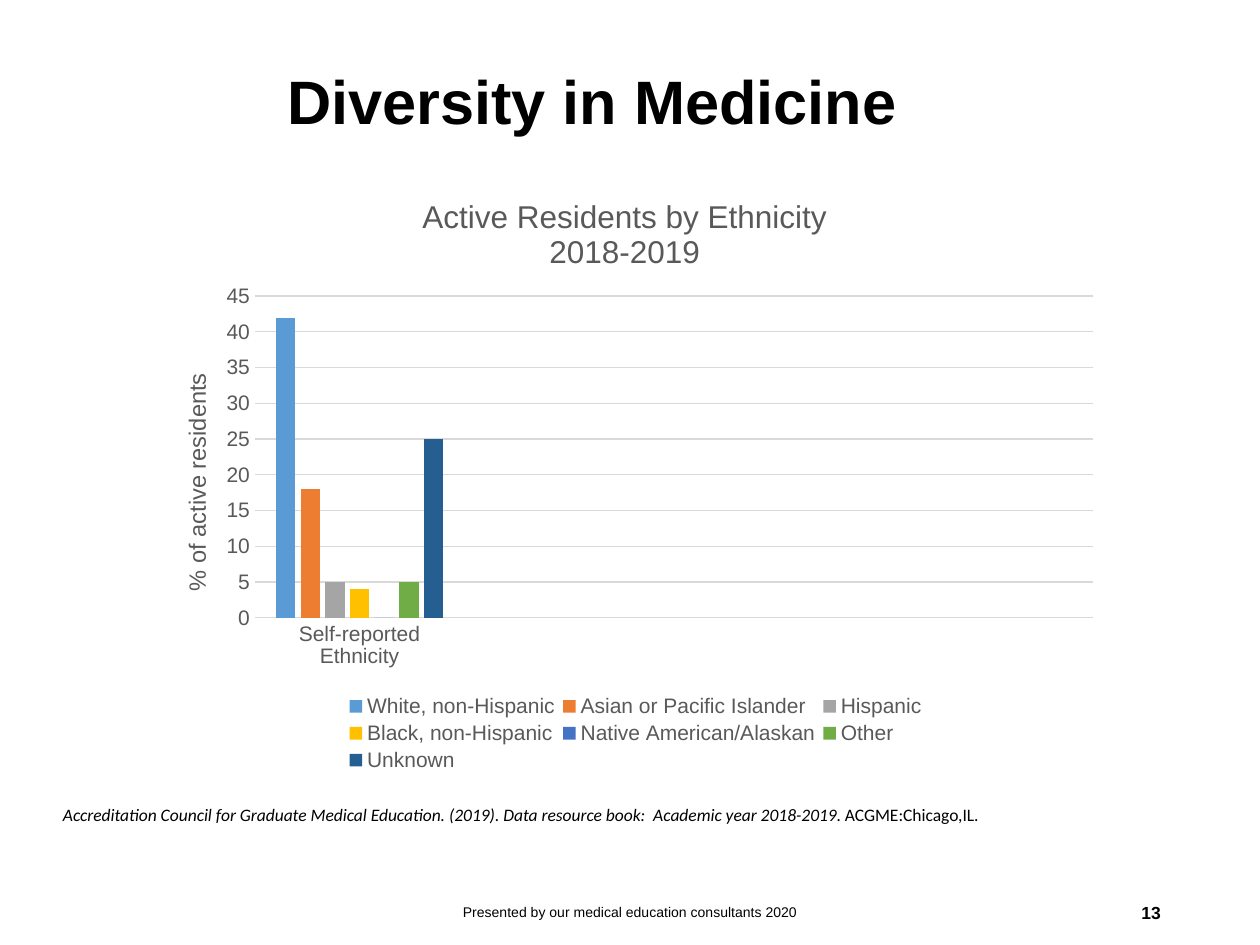
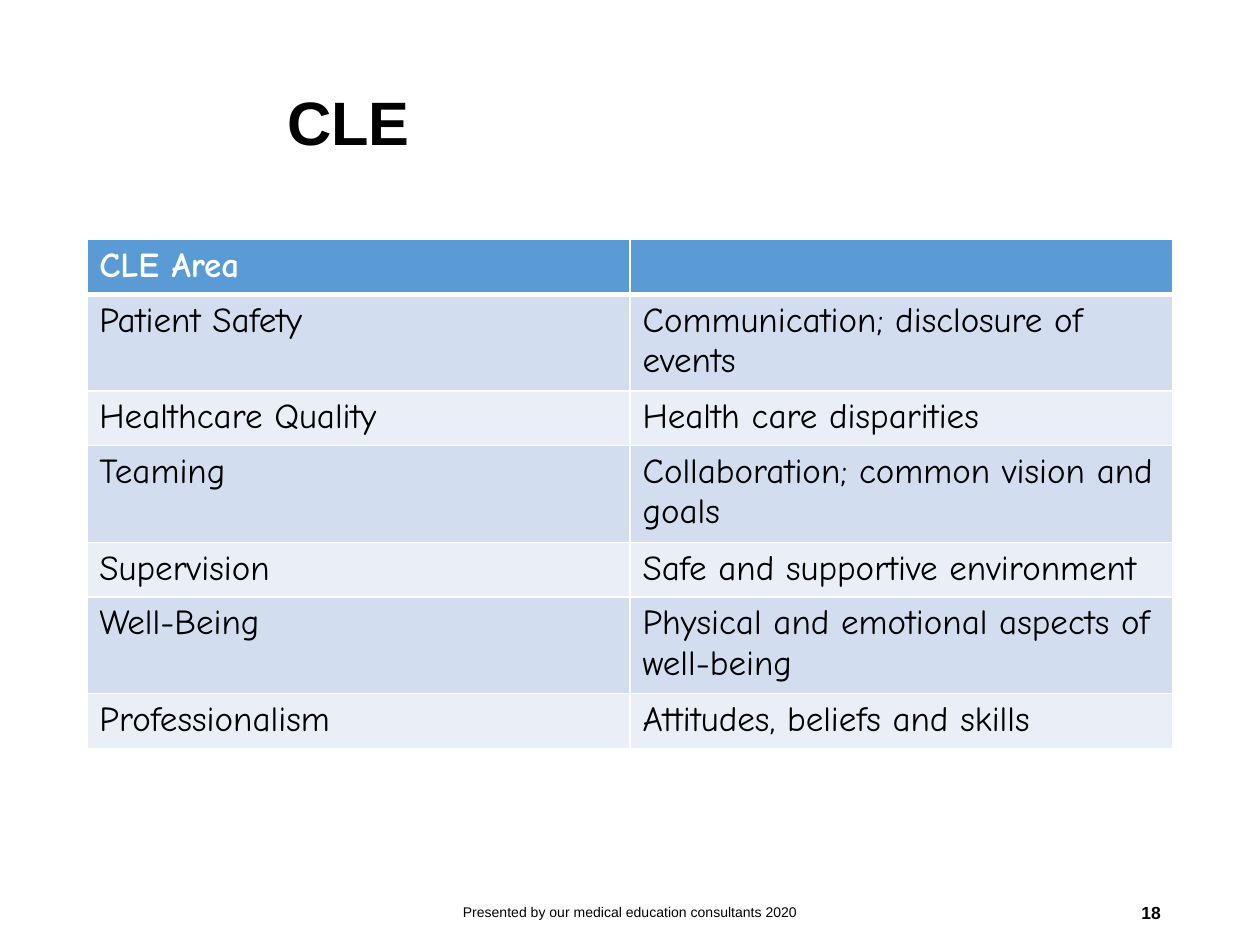
from lxml.etree import SubElement
from pptx import Presentation
from pptx.chart.data import CategoryChartData
from pptx.dml.color import RGBColor
from pptx.enum.chart import XL_CHART_TYPE, XL_LEGEND_POSITION, XL_TICK_MARK
from pptx.enum.text import MSO_ANCHOR, PP_ALIGN
from pptx.oxml import parse_xml
from pptx.oxml.ns import nsdecls, qn
from pptx.util import Cm, Pt

COLOURS = {
    "black": "000000", "white": "FFFFFF", "grey": "595959", "rule": "D9D9D9",
    "header": "5B9BD5", "dark band": "D2DEEF", "light band": "EAEFF7",
}
FOOTER = "Presented by our medical education consultants 2020"
ETHNICITIES = [
    ("White, non-Hispanic", 42, "5B9BD5"),
    ("Asian or Pacific Islander", 18, "ED7D31"),
    ("Hispanic", 5, "A5A5A5"),
    ("Black, non-Hispanic", 4, "FFC000"),
    ("Native American/Alaskan", 0, "4472C4"),
    ("Other", 5, "70AD47"),
    ("Unknown", 25, "255E91"),
]
CLE_AREAS = [
    ("CLE Area", ""),
    ("Patient Safety", "Communication; disclosure of events"),
    ("Healthcare Quality", "Health care disparities"),
    ("Teaming", "Collaboration; common vision and goals"),
    ("Supervision", "Safe and supportive environment"),
    ("Well-Being", "Physical and emotional aspects of well-being"),
    ("Professionalism", "Attitudes, beliefs and skills"),
]


def style_font(font, size, colour="black", name="Arial", bold=False, italic=False):
    font.size, font.name, font.bold, font.italic = Pt(size), name, bold, italic
    font.color.rgb = RGBColor.from_string(COLOURS[colour])


def write_text(para, text, **style):
    span = para.add_run()
    span.text = text
    style_font(span.font, **style)


def set_layout(element, index, **fractions):
    for old in element.findall(qn("c:layout")):
        element.remove(old)
    layout = parse_xml(f"<c:layout {nsdecls('c')}><c:manualLayout/></c:layout>")
    manual = layout[0]
    if element.tag == qn("c:plotArea"):
        SubElement(manual, qn("c:layoutTarget")).set("val", "inner")
    for mode in ("xMode", "yMode"):
        SubElement(manual, qn(f"c:{mode}")).set("val", "edge")
    for key, value in fractions.items():
        SubElement(manual, qn(f"c:{key}")).set("val", str(value))
    element.insert(index, layout)


def set_borders(cell, **widths):
    properties = cell._tc.get_or_add_tcPr()
    for side in "LRTB":
        width = Pt(widths.get(side, 1))
        properties.append(parse_xml(
            f'<a:ln{side} {nsdecls("a")} w="{width}"><a:solidFill>'
            f'<a:srgbClr val="{COLOURS["white"]}"/></a:solidFill></a:ln{side}>'))


class SlideBuilder:
    def __init__(self):
        self.deck = Presentation()
        self.deck.slide_width, self.deck.slide_height = Cm(25.4), Cm(19.05)
        self.page = None

    def add_page(self, title, title_top, number):
        self.page = self.deck.slides.add_slide(self.deck.slide_layouts[6])
        heading = self.add_text((5.54, title_top, 18.14, 3.68), title, size=35, bold=True)
        heading.line_spacing = 0.9
        self.add_text((17.93, 17.88, 5.72, 1.02), number, PP_ALIGN.RIGHT, size=10, bold=True)
        self.add_text((8.41, 17.88, 8.59, 1.02), FOOTER, PP_ALIGN.CENTER, size=8)

    def add_text(self, place, text, align=PP_ALIGN.LEFT, anchor=MSO_ANCHOR.MIDDLE, **style):
        frame = self.page.shapes.add_textbox(*map(Cm, place)).text_frame
        frame.word_wrap = True
        frame.vertical_anchor = anchor
        para = frame.paragraphs[0]
        para.alignment = align
        write_text(para, text, **style)
        return para

    def add_column_chart(self, place, title_lines, axis_title, categories, rows):
        data = CategoryChartData()
        data.categories = categories
        for name, value, _ in rows:
            data.add_series(name, [value] + [None] * (len(categories) - 1))
        chart = self.page.shapes.add_chart(
            XL_CHART_TYPE.COLUMN_CLUSTERED, *map(Cm, place), data).chart
        style_font(chart.font, 12, "grey")
        plot = chart.plots[0]
        plot.gap_width, plot.overlap, plot.vary_by_categories = 219, -27, False
        for series, (_, _, colour) in zip(plot.series, rows):
            series.format.fill.solid()
            series.format.fill.fore_color.rgb = RGBColor.from_string(colour)

        chart.has_title = True
        frame = chart.chart_title.text_frame
        for index, line in enumerate(title_lines):
            para = frame.add_paragraph() if index else frame.paragraphs[0]
            para.alignment = PP_ALIGN.CENTER
            write_text(para, line, size=18, colour="grey")
        set_layout(chart.chart_title._element, 1, x=0.28, y=0.04)

        value_axis, category_axis = chart.value_axis, chart.category_axis
        value_axis.minimum_scale, value_axis.maximum_scale, value_axis.major_unit = 0, 45, 5
        for axis in (value_axis, category_axis):
            axis.major_tick_mark = axis.minor_tick_mark = XL_TICK_MARK.NONE
            style_font(axis.tick_labels.font, 12, "grey")
        value_axis.format.line.fill.background()
        for line in (category_axis.format.line, value_axis.major_gridlines.format.line):
            line.color.rgb = RGBColor.from_string(COLOURS["rule"])
            line.width = Pt(0.75)
        label = value_axis.axis_title
        write_text(label.text_frame.paragraphs[0], axis_title, size=13.5, colour="grey")
        label._element.find(".//" + qn("a:bodyPr")).set("rot", "-5400000")
        set_layout(label._element, 1, x=0.03, y=0.33)

        chart.has_legend = True
        legend = chart.legend
        legend.position = XL_LEGEND_POSITION.BOTTOM
        legend.include_in_layout = False
        style_font(legend.font, 12, "grey")
        set_layout(legend._element, 1, x=0.2, y=0.86, w=0.61, h=0.14)
        plot_area = chart._chartSpace.find(".//" + qn("c:plotArea"))
        set_layout(plot_area, 0, x=0.11, y=0.21, w=0.87, h=0.53)

    def add_table(self, left, top, column_width, row_height, rows):
        columns = len(rows[0])
        table = self.page.shapes.add_table(
            len(rows), columns, Cm(left), Cm(top),
            Cm(column_width * columns), Cm(row_height * len(rows))).table
        for row_index, row in enumerate(rows):
            is_header = row_index == 0
            band = "header" if is_header else ("light band", "dark band")[row_index % 2]
            for column_index, text in enumerate(row):
                cell = table.cell(row_index, column_index)
                set_borders(cell, T=3 if row_index == 1 else 1, B=3 if is_header else 1)
                cell.fill.solid()
                cell.fill.fore_color.rgb = RGBColor.from_string(COLOURS[band])
                para = cell.text_frame.paragraphs[0]
                style = dict(size=20, name="Comic Neue", bold=is_header,
                             colour="white" if is_header else "black")
                if text:
                    write_text(para, text, **style)
                else:
                    style_font(para.font, **style)


def main():
    builder = SlideBuilder()

    builder.add_page("Diversity in Medicine", 0.28, "13")
    builder.add_column_chart(
        (3, 3.4, 19.43, 12.24), ["Active Residents by Ethnicity", "2018-2019"],
        "% of active residents", ["Self-reported Ethnicity", "", "", ""], ETHNICITIES)
    citation = builder.add_text(
        (1.02, 16.08, 20.7, 0.69),
        "Accreditation Council for Graduate Medical Education. (2019). "
        "Data resource book:  Academic year 2018-2019.",
        anchor=MSO_ANCHOR.TOP, size=10, name="Calibri", italic=True)
    write_text(citation, " ACGME:Chicago,IL.", size=10, name="Calibri")

    builder.add_page("CLE", 0.69, "18")
    builder.add_table(1.75, 4.83, 10.95, 1.04, CLE_AREAS)

    builder.deck.save("out.pptx")


if __name__ == "__main__":
    main()
